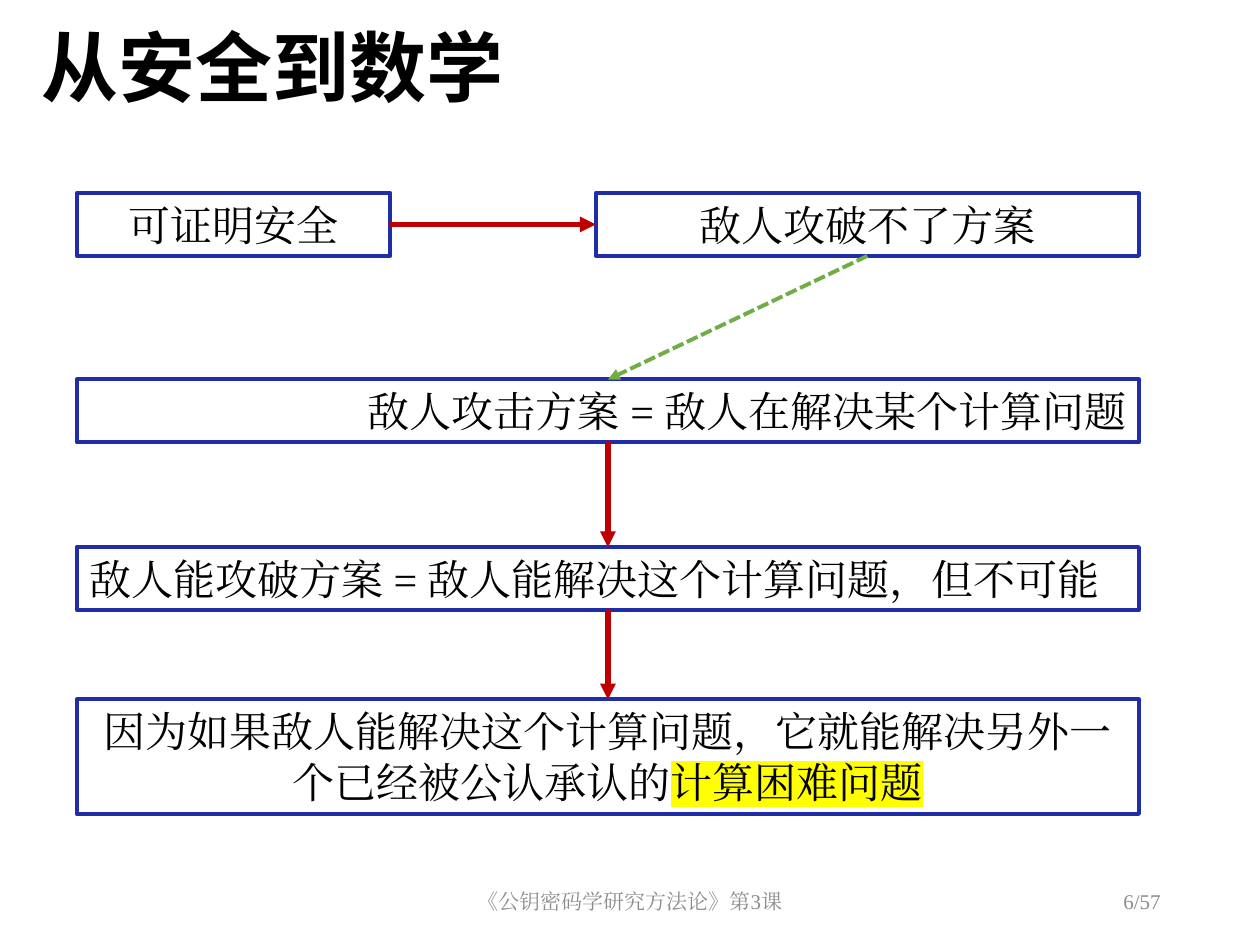
from dataclasses import dataclass

from lxml.etree import SubElement
from pptx import Presentation
from pptx.dml.color import RGBColor
from pptx.enum.dml import MSO_LINE
from pptx.enum.shapes import MSO_CONNECTOR, MSO_SHAPE
from pptx.enum.text import MSO_ANCHOR, PP_ALIGN
from pptx.oxml import parse_xml
from pptx.oxml.ns import nsdecls, qn
from pptx.util import Cm, Pt


@dataclass(frozen=True)
class Theme:
    ink: str = "000000"
    muted: str = "8C8C8C"
    frame: str = "1F2DA8"
    step: str = "C00000"
    hint: str = "70AD47"
    marker: str = "FFFF00"
    heading_font: str = "Noto Sans CJK SC"
    body_font: str = "Times New Roman"
    heading_size: int = 44
    body_size: int = 24
    footer_size: int = 12


theme = Theme()


def write(shape, text, size=theme.body_size, color=theme.ink, font=theme.body_font,
          bold=False, align=PP_ALIGN.CENTER, anchor=MSO_ANCHOR.TOP,
          spacing=None, highlight=None):
    frame = shape.text_frame
    frame.word_wrap = True
    frame.vertical_anchor = anchor
    paragraph = frame.paragraphs[0]
    paragraph.alignment = align
    paragraph.line_spacing = spacing
    run = paragraph.add_run()
    run.text = text
    run.font.size = Pt(size)
    run.font.bold = bold
    run.font.color.rgb = RGBColor.from_string(color)
    run.font.name = font
    properties = run.font._element
    SubElement(properties, qn("a:ea"), typeface=font)
    if highlight:
        properties.find(qn("a:latin")).addprevious(parse_xml(
            f'<a:highlight {nsdecls("a")}><a:srgbClr val="{highlight}"/></a:highlight>'))


presentation = Presentation()
presentation.slide_width, presentation.slide_height = Cm(25.4), Cm(19.05)
slide = presentation.slides.add_slide(presentation.slide_layouts[6])
shapes = slide.shapes

heading = shapes.add_textbox(Cm(0.58), Cm(0.48), Cm(24.31), Cm(2.34))
write(heading, "从安全到数学", size=theme.heading_size, font=theme.heading_font,
      bold=True, align=PP_ALIGN.LEFT, spacing=0.9)

for left, width, text, align in [
    (8.41, 8.58, "《公钥密码学研究方法论》第3课", PP_ALIGN.CENTER),
    (17.93, 5.72, "6/57", PP_ALIGN.RIGHT),
]:
    footer = shapes.add_textbox(Cm(left), Cm(17.65), Cm(width), Cm(1.02))
    write(footer, text, size=theme.footer_size, color=theme.muted,
          align=align, anchor=MSO_ANCHOR.MIDDLE)

margin, full_width, line_height = 1.55, 21.41, 1.27
statements = []
for left, top, width, height, text, align in [
    (margin, 3.89, 6.32, line_height, "可证明安全", PP_ALIGN.CENTER),
    (12.01, 3.89, 10.95, line_height, "敌人攻破不了方案", PP_ALIGN.CENTER),
    (margin, 7.65, full_width, line_height,
     "敌人攻击方案 = 敌人在解决某个计算问题", PP_ALIGN.RIGHT),
    (margin, 11.03, full_width, line_height,
     "敌人能攻破方案 = 敌人能解决这个计算问题，但不可能", PP_ALIGN.LEFT),
    (margin, 14.1, full_width, 2.31,
     "因为如果敌人能解决这个计算问题，它就能解决另外一个已经被公认承认的", PP_ALIGN.CENTER),
]:
    statement = shapes.add_shape(MSO_SHAPE.RECTANGLE, Cm(left), Cm(top), Cm(width), Cm(height))
    statement.shadow.inherit = False
    statement.fill.background()
    statement.line.color.rgb = RGBColor.from_string(theme.frame)
    statement.line.width = Pt(2.25)
    write(statement, text, align=align)
    statements.append(statement)

security, unbroken, attack, contradiction, hardness = statements
write(hardness, "计算困难问题", highlight=theme.marker)

top_side, left_side, bottom_side, right_side = range(4)
for source, source_side, target, target_side, color, weight, dash in [
    (security, right_side, unbroken, left_side, theme.step, 3, None),
    (unbroken, bottom_side, attack, top_side, theme.hint, 2.25, MSO_LINE.SQUARE_DOT),
    (attack, bottom_side, contradiction, top_side, theme.step, 3, None),
    (contradiction, bottom_side, hardness, top_side, theme.step, 3, None),
]:
    arrow = shapes.add_connector(MSO_CONNECTOR.STRAIGHT, Cm(0), Cm(0), Cm(0), Cm(0))
    arrow.begin_connect(source, source_side)
    arrow.end_connect(target, target_side)
    arrow.line.color.rgb = RGBColor.from_string(color)
    arrow.line.width = Pt(weight)
    if dash:
        arrow.line.dash_style = dash
    SubElement(arrow.line._get_or_add_ln(), qn("a:tailEnd"), type="triangle")
    SubElement(arrow._element.spPr, qn("a:effectLst"))

presentation.save("out.pptx")
